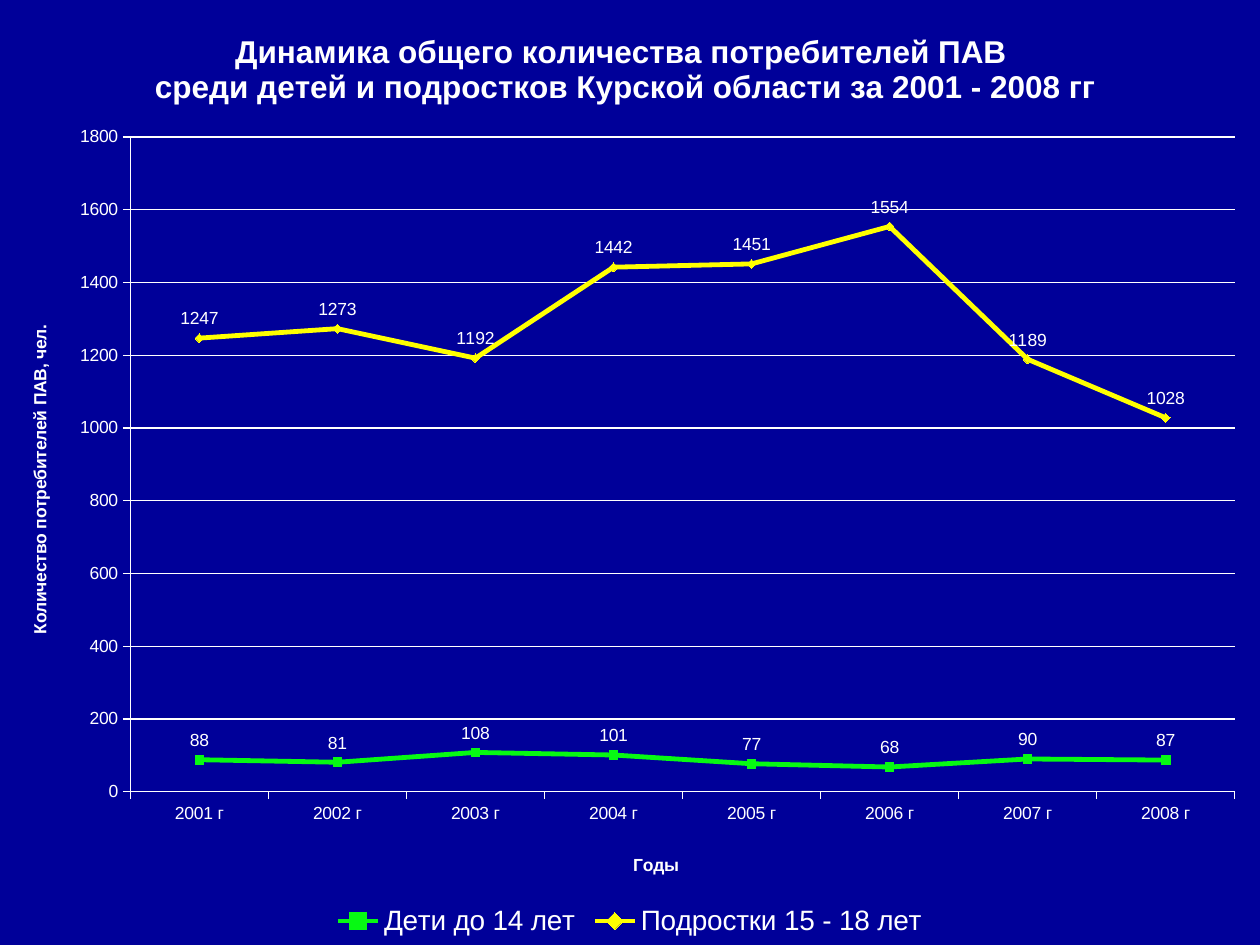
from pptx import Presentation
from pptx.chart.data import CategoryChartData
from pptx.dml.color import RGBColor
from pptx.enum.chart import (XL_CHART_TYPE, XL_LABEL_POSITION,
                             XL_LEGEND_POSITION, XL_MARKER_STYLE, XL_TICK_MARK)
from pptx.oxml import parse_xml
from pptx.oxml.ns import nsdecls, qn
from pptx.util import Inches, Pt

COLORS = {"background": "000099", "text": "FFFFFF",
          "children": "07F913", "teens": "FFFF00"}
TITLE = ["Динамика общего количества потребителей ПАВ ",
         "среди детей и подростков Курской области за 2001 - 2008 гг"]
YEARS = [f"{year} г" for year in range(2001, 2009)]
SERIES = [
    ("Дети до 14 лет", "children", XL_MARKER_STYLE.SQUARE,
     [88, 81, 108, 101, 77, 68, 90, 87]),
    ("Подростки 15 - 18 лет", "teens", XL_MARKER_STYLE.DIAMOND,
     [1247, 1273, 1192, 1442, 1451, 1554, 1189, 1028]),
]


def rgb(name):
    return RGBColor.from_string(COLORS[name])


def style_font(font, size, bold=False):
    formats = {"name": "Arial", "size": Pt(size), "bold": bold}
    for attribute, value in formats.items():
        setattr(font, attribute, value)
    font.color.rgb = rgb("text")


def style_line(line, color, width):
    line.color.rgb = rgb(color)
    line.width = Pt(width)


def set_layout(element, index, target=None, **fractions):
    for old in element.findall(qn("c:layout")):
        element.remove(old)
    parts = f'<c:layoutTarget val="{target}"/>' if target else ""
    parts += "".join(f'<c:{key}Mode val="edge"/>' for key in "xy")
    parts += "".join(f'<c:{key} val="{value}"/>' for key, value in fractions.items())
    element.insert(index, parse_xml(
        f'<c:layout {nsdecls("c")}><c:manualLayout>{parts}</c:manualLayout></c:layout>'))


def write_title(title, lines, size, x, y):
    tf = title.text_frame
    for i, line in enumerate(lines):
        p = tf.add_paragraph() if i else tf.paragraphs[0]
        r = p.add_run()
        r.text = line
        style_font(p.font, size, True)
        style_font(r.font, size, True)
    set_layout(title._element, 1, x=x, y=y)


def style_axis(axis, title, x, y):
    axis.major_tick_mark = XL_TICK_MARK.OUTSIDE
    axis.minor_tick_mark = XL_TICK_MARK.NONE
    style_font(axis.tick_labels.font, 10)
    style_line(axis.format.line, "text", 0.75)
    write_title(axis.axis_title, [title], 10, x, y)


def style_series(series, color, marker):
    series.smooth = False
    style_line(series.format.line, color, 2.75)
    series.marker.style = marker
    series.marker.size = 5
    series.marker.format.fill.solid()
    series.marker.format.fill.fore_color.rgb = rgb(color)
    style_line(series.marker.format.line, color, 0.75)
    labels = series.data_labels
    labels.show_value = True
    labels.position = XL_LABEL_POSITION.ABOVE
    style_font(labels.font, 10)


def add_trend_chart(slide, left, top, width, height):
    data = CategoryChartData()
    data.categories = YEARS
    for name, _, _, values in SERIES:
        data.add_series(name, values)
    chart = slide.shapes.add_chart(XL_CHART_TYPE.LINE_MARKERS, left, top,
                                   width, height, data).chart
    style_font(chart.font, 10)
    chart.has_title = True
    write_title(chart.chart_title, TITLE, 18, 0.12, 0.03)

    style_axis(chart.category_axis, "Годы", 0.5, 0.9)
    axis = chart.value_axis
    style_axis(axis, "Количество потребителей ПАВ, чел.", 0.02, 0.34)
    axis.minimum_scale, axis.maximum_scale, axis.major_unit = 0, 1800, 200
    axis.has_major_gridlines = True
    style_line(axis.major_gridlines.format.line, "text", 0.75)

    plot = chart.plots[0]
    plot.vary_by_categories = False
    for series, (_, color, marker, _) in zip(plot.series, SERIES):
        style_series(series, color, marker)

    chart.has_legend = True
    chart.legend.position = XL_LEGEND_POSITION.BOTTOM
    chart.legend.include_in_layout = False
    style_font(chart.legend.font, 16)
    set_layout(chart.legend._element, 1, x=0.26, y=0.96, w=0.48, h=0.04)
    plot_area = chart.value_axis._element.getparent()
    set_layout(plot_area, 0, "inner", x=0.1035, y=0.145, w=0.8765, h=0.693)


def main():
    prs = Presentation()
    prs.slide_width, prs.slide_height = Inches(10), Inches(7.5)
    s = prs.slides.add_slide(prs.slide_layouts[6])
    s.background.fill.solid()
    s.background.fill.fore_color.rgb = rgb("background")
    add_trend_chart(s, Inches(0), Inches(0), Inches(10), Inches(7.5))
    prs.save("out.pptx")


if __name__ == "__main__":
    main()
